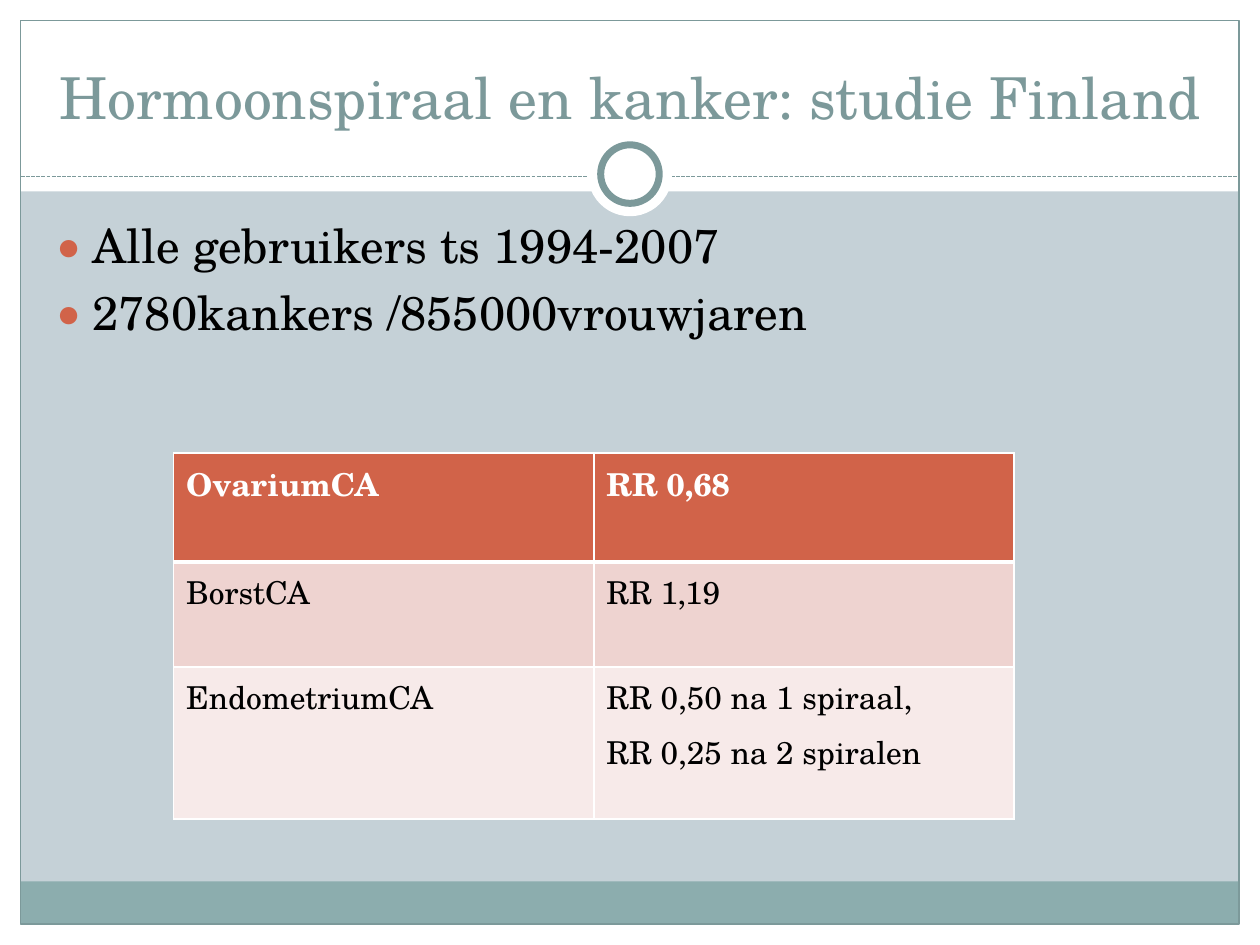
"""Build the slide on hormonal coils and cancer in the Finnish study."""
from dataclasses import dataclass

from lxml import etree
from pptx import Presentation
from pptx import util as u
from pptx.dml.color import RGBColor
from pptx.enum import dml, shapes, text
from pptx.oxml import ns

HEADING = "Hormoonspiraal en kanker: studie Finland"
FINDINGS = ["Alle gebruikers ts 1994-2007", "2780kankers /855000vrouwjaren"]
RISKS = [
    ("OvariumCA", ["RR 0,68"]),
    ("BorstCA", ["RR 1,19"]),
    ("EndometriumCA", ["RR 0,50 na 1 spiraal,", "RR 0,25 na 2 spiralen"]),
]


@dataclass(frozen=True)
class Theme:
    font: str = "TeX Gyre Schola"
    backdrop: str = "C5D1D7"
    white: str = "FFFFFF"
    black: str = "000000"
    teal: str = "7C999A"
    footer: str = "8CADAE"
    accent: str = "D16349"
    row_fills: tuple = ("D16349", "EED3D0", "F7EAE9")
    heading_size: int = 33
    finding_size: int = 27
    risk_size: int = 18


THEME = Theme()
PAGE_W, PAGE_H = 25.4, 19.05
MARGIN = 0.42
INNER_W, INNER_H = PAGE_W - 2 * MARGIN, PAGE_H - 2 * MARGIN
HEADER_H, RULE_Y, FOOTER_H = 3.86, 3.56, 0.86
RING_Y = 3.51
COLUMN_W = 8.47
ROW_HEIGHTS = (2.2, 2.12, 3.06)


def colour(value):
    return RGBColor.from_string(value)


def box(at):
    return [u.Cm(length) for length in at]


def place(shape, at):
    shape.left, shape.top, shape.width, shape.height = box(at)


def add_run(paragraph, words, size, ink, bold=False):
    run = paragraph.add_run()
    run.text = words
    run.font.name, run.font.size, run.font.bold = THEME.font, u.Pt(size), bold
    run.font.color.rgb = colour(ink)


def add_panel(slide, kind, at, fill=None, line=None, weight=0.75):
    panel = slide.shapes.add_shape(kind, *box(at))
    panel.shadow.inherit = False
    if fill:
        panel.fill.solid()
        panel.fill.fore_color.rgb = colour(fill)
    else:
        panel.fill.background()
    if line:
        panel.line.color.rgb = colour(line)
        panel.line.width = u.Pt(weight)
    else:
        panel.line.fill.background()


def add_disc(slide, diameter, **style):
    at = ((PAGE_W - diameter) / 2, RING_Y - diameter / 2, diameter, diameter)
    add_panel(slide, shapes.MSO_SHAPE.OVAL, at, THEME.white, **style)


def add_frame(slide):
    rectangle = shapes.MSO_SHAPE.RECTANGLE
    bands = [
        (0, PAGE_H - MARGIN, PAGE_W, MARGIN),
        (0, 0, PAGE_W, HEADER_H),
        (0, 0, MARGIN, PAGE_H),
        (PAGE_W - MARGIN, 0, MARGIN, PAGE_H),
    ]
    for at in bands:
        add_panel(slide, rectangle, at, THEME.white)
    footer_top = PAGE_H - MARGIN - FOOTER_H
    add_panel(slide, rectangle, (MARGIN, footer_top, INNER_W, FOOTER_H), THEME.footer)
    add_panel(slide, rectangle, (MARGIN, MARGIN, INNER_W, INNER_H), line=THEME.teal)

    rule = slide.shapes.add_connector(
        shapes.MSO_CONNECTOR.STRAIGHT,
        *box((MARGIN, RULE_Y, PAGE_W - MARGIN, RULE_Y)))
    rule.line.color.rgb = colour(THEME.teal)
    rule.line.width = u.Pt(0.75)
    rule.line.dash_style = dml.MSO_LINE.SQUARE_DOT
    etree.SubElement(rule.element.spPr, ns.qn("a:effectLst"))

    add_disc(slide, 1.7)
    add_disc(slide, 1.18, line=THEME.teal, weight=4)


def bring_forward(shape):
    shape.element.getparent().append(shape.element)


def fill_heading(title):
    place(title, (0.85, 0.64, 23.7, 2.12))
    frame = title.text_frame
    frame.auto_size = text.MSO_AUTO_SIZE.NONE
    frame.vertical_anchor = text.MSO_ANCHOR.BOTTOM
    frame.margin_left = frame.margin_right = 0
    frame.paragraphs[0].alignment = text.PP_ALIGN.CENTER
    add_run(frame.paragraphs[0], HEADING, THEME.heading_size, THEME.teal)


def set_bullet(paragraph):
    properties = paragraph._p.get_or_add_pPr()
    properties.set("marL", str(u.Cm(0.76)))
    properties.set("indent", str(-u.Cm(0.76)))
    tint = etree.SubElement(properties, ns.qn("a:buClr"))
    etree.SubElement(tint, ns.qn("a:srgbClr"), val=THEME.accent)
    etree.SubElement(properties, ns.qn("a:buSzPct"), val="85000")
    etree.SubElement(properties, ns.qn("a:buFont"), typeface=THEME.font)
    etree.SubElement(properties, ns.qn("a:buChar"), char="●")


def fill_findings(body):
    place(body, (0.85, 4.23, 23.62, 12.7))
    frame = body.text_frame
    frame.auto_size = text.MSO_AUTO_SIZE.NONE
    for index, finding in enumerate(FINDINGS):
        paragraph = frame.add_paragraph() if index else frame.paragraphs[0]
        paragraph.space_before = u.Pt(6)
        set_bullet(paragraph)
        add_run(paragraph, finding, THEME.finding_size, THEME.black)


def set_borders(cell, weights):
    properties = cell._tc.get_or_add_tcPr()
    for position, (side, weight) in enumerate(weights.items()):
        edge = etree.Element(ns.qn(f"a:{side}"), w=str(u.Pt(weight)))
        fill = etree.SubElement(edge, ns.qn("a:solidFill"))
        etree.SubElement(fill, ns.qn("a:srgbClr"), val=THEME.white)
        properties.insert(position, edge)


def fill_cell(cell, lines, row):
    cell.fill.solid()
    cell.fill.fore_color.rgb = colour(THEME.row_fills[row])
    is_header = row == 0
    for index, words in enumerate(lines):
        paragraph = cell.text_frame.add_paragraph() if index else cell.text_frame.paragraphs[0]
        paragraph.space_before = u.Pt(5)
        ink = THEME.white if is_header else THEME.black
        add_run(paragraph, words, THEME.risk_size, ink, is_header)
    set_borders(cell, {"lnL": 1, "lnR": 1, "lnT": 3 if row == 1 else 1,
                       "lnB": 3 if is_header else 1})


def add_risks(slide):
    at = (3.5, 9.13, 2 * COLUMN_W, sum(ROW_HEIGHTS))
    risks = slide.shapes.add_table(len(RISKS), 2, *box(at)).table
    for column in risks.columns:
        column.width = u.Cm(COLUMN_W)
    for row, (cancer, ratios) in enumerate(RISKS):
        risks.rows[row].height = u.Cm(ROW_HEIGHTS[row])
        fill_cell(risks.cell(row, 0), [cancer], row)
        fill_cell(risks.cell(row, 1), ratios, row)


def main():
    deck = Presentation()
    deck.slide_width, deck.slide_height = u.Cm(PAGE_W), u.Cm(PAGE_H)
    slide = deck.slides.add_slide(deck.slide_layouts[1])
    slide.background.fill.solid()
    slide.background.fill.fore_color.rgb = colour(THEME.backdrop)
    title, body = slide.placeholders
    add_frame(slide)
    bring_forward(title)
    bring_forward(body)
    fill_heading(title)
    fill_findings(body)
    add_risks(slide)
    deck.save("out.pptx")


if __name__ == "__main__":
    main()
